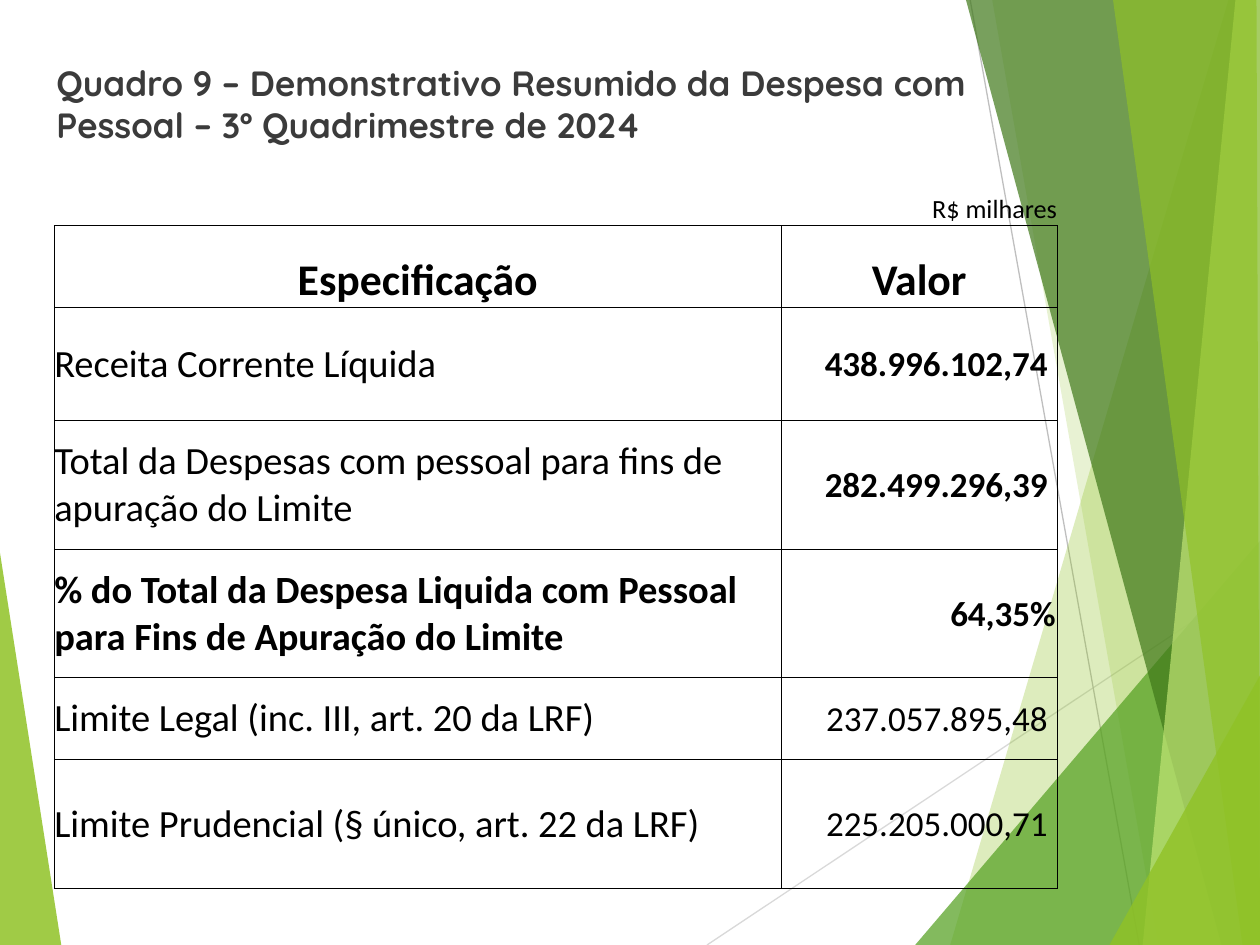
from dataclasses import dataclass

import lxml.etree
import pptx
import pptx.dml.color
import pptx.enum.shapes
import pptx.enum.text
import pptx.oxml.ns
import pptx.util

Pt = pptx.util.Pt
ALIGN = pptx.enum.text.PP_ALIGN
ANCHOR = pptx.enum.text.MSO_ANCHOR
qualified = pptx.oxml.ns.qn

COLORS = {
    "lime": "90C226",
    "green": "54A021",
    "forest": "3F7819",
    "pale": "C0E474",
    "light_gray": "D9D9D9",
    "gray": "BFBFBF",
    "title": "3B3B3B",
    "black": "000000",
}
NO_STYLE = "{2D5ABB26-0587-4C30-8999-92F81FD0307C}"
COLUMN_WIDTHS = (138.24, 128.88, 95.76, 52.56, 157.68)
UNIT_ROW_HEIGHT = 28.8
LABEL_SPAN = len(COLUMN_WIDTHS) - 1


@dataclass(frozen=True)
class Facet:
    points: tuple
    color: str
    opacity: int


@dataclass(frozen=True)
class Ray:
    start: tuple
    end: tuple
    color: str


@dataclass(frozen=True)
class Style:
    size: float
    bold: bool = False
    align: ALIGN = ALIGN.LEFT
    font: str = "Calibri"
    color: str = "black"


@dataclass(frozen=True)
class TableRow:
    height: float
    label: str
    value: str
    label_bold: bool = False
    value_bold: bool = False


LEFT_FACET = Facet(((0, 316), (35.3, 540), (0, 540)), "lime", 85)
RAYS = (
    Ray((404, 540), (720, 329.5), "light_gray"),
    Ray((554.4, 0), (651, 540), "gray"),
)
RIGHT_FACETS = (
    Facet(((702, 0), (543, 540), (720, 540), (720, 0)), "lime", 30),
    Facet(((567, 0), (661.5, 540), (720, 540), (720, 0)), "lime", 20),
    Facet(((522.7, 540), (720, 309), (720, 540)), "green", 72),
    Facet(((552.3, 0), (698.5, 540), (720, 540), (720, 0)), "forest", 70),
    Facet(((706.5, 0), (653, 540), (720, 540), (720, 0)), "pale", 70),
    Facet(((636, 0), (710, 540), (720, 540), (718.5, 0)), "lime", 65),
    Facet(((634.5, 540), (720, 385.5), (720, 540)), "lime", 80),
)
ROWS = (
    TableRow(64.8, "Receita Corrente Líquida", "438.996.102,74 ", value_bold=True),
    TableRow(73.44, "Total da Despesas com pessoal para fins de apuração do Limite",
             "282.499.296,39 ", value_bold=True),
    TableRow(73.44, "% do Total da Despesa Liquida com Pessoal para Fins de Apuração do Limite",
             "64,35%", True, True),
    TableRow(46.8, "Limite Legal (inc. III, art. 20 da LRF)", "237.057.895,48 "),
    TableRow(73.44, "Limite Prudencial (§ único, art. 22 da LRF)", "225.205.000,71 "),
)
HEADER = TableRow(46.8, "Especificação", "Valor")


def rgb(name: str) -> pptx.dml.color.RGBColor:
    """Return the named colour."""
    return pptx.dml.color.RGBColor.from_string(COLORS[name])


def apply_format(target, values: dict) -> None:
    """Set every attribute in the format values."""
    for name, value in values.items():
        setattr(target, name, value)


def draw_facet(slide, facet: Facet) -> None:
    """Draw a translucent polygon."""
    builder = slide.shapes.build_freeform(*facet.points[0], scale=Pt(1))
    builder.add_line_segments(facet.points[1:], close=True)
    shape = builder.convert_to_shape()
    shape.shadow.inherit = False
    shape.line.fill.background()
    shape.fill.solid()
    shape.fill.fore_color.rgb = rgb(facet.color)
    color = next(shape._element.spPr.iter(qualified("a:srgbClr")))
    lxml.etree.SubElement(color, qualified("a:alpha"), val=str(facet.opacity * 1000))


def draw_ray(slide, ray: Ray) -> None:
    """Draw a thin straight line."""
    ends = [Pt(length) for length in (*ray.start, *ray.end)]
    connector = slide.shapes.add_connector(pptx.enum.shapes.MSO_CONNECTOR.STRAIGHT, *ends)
    connector.line.width = Pt(0.75)
    connector.line.color.rgb = rgb(ray.color)
    lxml.etree.SubElement(connector._element.spPr, qualified("a:effectLst"))


def write_text(frame, text: str, style: Style) -> None:
    """Write one formatted paragraph."""
    paragraph = frame.paragraphs[0]
    paragraph.alignment = style.align
    run = paragraph.add_run()
    run.text = text
    apply_format(run.font, {"name": style.font, "size": Pt(style.size), "bold": style.bold})
    run.font.color.rgb = rgb(style.color)


def format_cell(cell, sides: str, anchor: ANCHOR, margin: float = 0) -> None:
    """Set the borders, margins and anchor of a clear cell."""
    apply_format(cell, {
        "margin_left": Pt(margin),
        "margin_right": Pt(margin),
        "margin_top": Pt(margin),
        "margin_bottom": 0,
        "vertical_anchor": anchor,
    })
    properties = cell._tc.get_or_add_tcPr()
    for side in sides:
        line = lxml.etree.SubElement(properties, qualified(f"a:ln{side}"), w=str(Pt(0.5)))
        fill = lxml.etree.SubElement(line, qualified("a:solidFill"))
        lxml.etree.SubElement(fill, qualified("a:srgbClr"), val=COLORS["black"])
    cell.fill.background()


def fill_row(table, index: int, row: TableRow, label_style: Style, value_style: Style,
             anchor: ANCHOR, margin: float = 0) -> None:
    """Fill a row that has a merged label and a value."""
    table.rows[index].height = Pt(row.height)
    cells = [table.cell(index, column) for column in range(LABEL_SPAN + 1)]
    label, value = cells[0], cells[-1]
    label.merge(cells[LABEL_SPAN - 1])
    for cell in cells[1:-1]:
        format_cell(cell, "TB", anchor)
    format_cell(label, "LRTB", anchor)
    format_cell(value, "LRTB", anchor, margin)
    write_text(label.text_frame, row.label, label_style)
    write_text(value.text_frame, row.value, value_style)


def draw_table(slide) -> None:
    """Draw the expense table below its unit row."""
    height = UNIT_ROW_HEIGHT + HEADER.height + sum(row.height for row in ROWS)
    frame = slide.shapes.add_table(len(ROWS) + 2, len(COLUMN_WIDTHS), Pt(31), Pt(100.1),
                                   Pt(sum(COLUMN_WIDTHS)), Pt(height))
    table = frame.table
    apply_format(table, {"first_row": False, "horz_banding": False})
    table._tbl.tblPr.find(qualified("a:tableStyleId")).text = NO_STYLE
    for column, width in zip(table.columns, COLUMN_WIDTHS):
        column.width = Pt(width)
    table.rows[0].height = Pt(UNIT_ROW_HEIGHT)
    for cell in table.rows[0].cells:
        format_cell(cell, "B", ANCHOR.BOTTOM)
    write_text(table.cell(0, LABEL_SPAN).text_frame, "R$ milhares", Style(15, align=ALIGN.RIGHT))
    header_style = Style(25, True, ALIGN.CENTER)
    fill_row(table, 1, HEADER, header_style, header_style, ANCHOR.BOTTOM)
    for index, row in enumerate(ROWS, start=2):
        fill_row(table, index, row, Style(22, row.label_bold),
                 Style(20, row.value_bold, ALIGN.RIGHT), ANCHOR.MIDDLE, 0.7)


def main() -> None:
    """Build and save the presentation."""
    presentation = pptx.Presentation()
    apply_format(presentation, {"slide_width": Pt(720), "slide_height": Pt(540)})
    slide = presentation.slides.add_slide(presentation.slide_layouts[6])
    draw_facet(slide, LEFT_FACET)
    for ray in RAYS:
        draw_ray(slide, ray)
    for facet in RIGHT_FACETS:
        draw_facet(slide, facet)
    title = slide.shapes.add_textbox(Pt(25.2), Pt(31.7), Pt(612), Pt(48.2))
    title.text_frame.word_wrap = True
    write_text(title.text_frame,
               "Quadro 9 – Demonstrativo Resumido da Despesa com Pessoal – 3º Quadrimestre de 2024",
               Style(20, True, font="Quicksand", color="title"))
    draw_table(slide)
    presentation.save("out.pptx")


if __name__ == "__main__":
    main()
